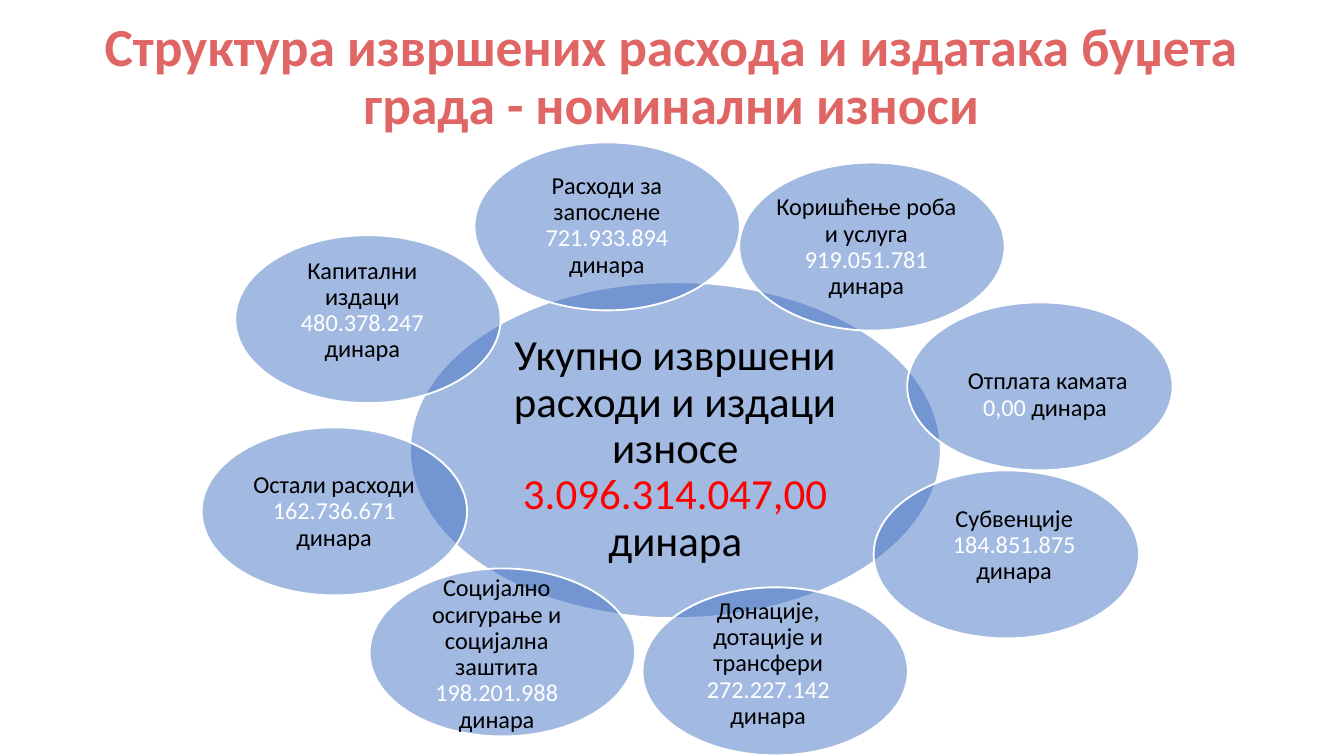
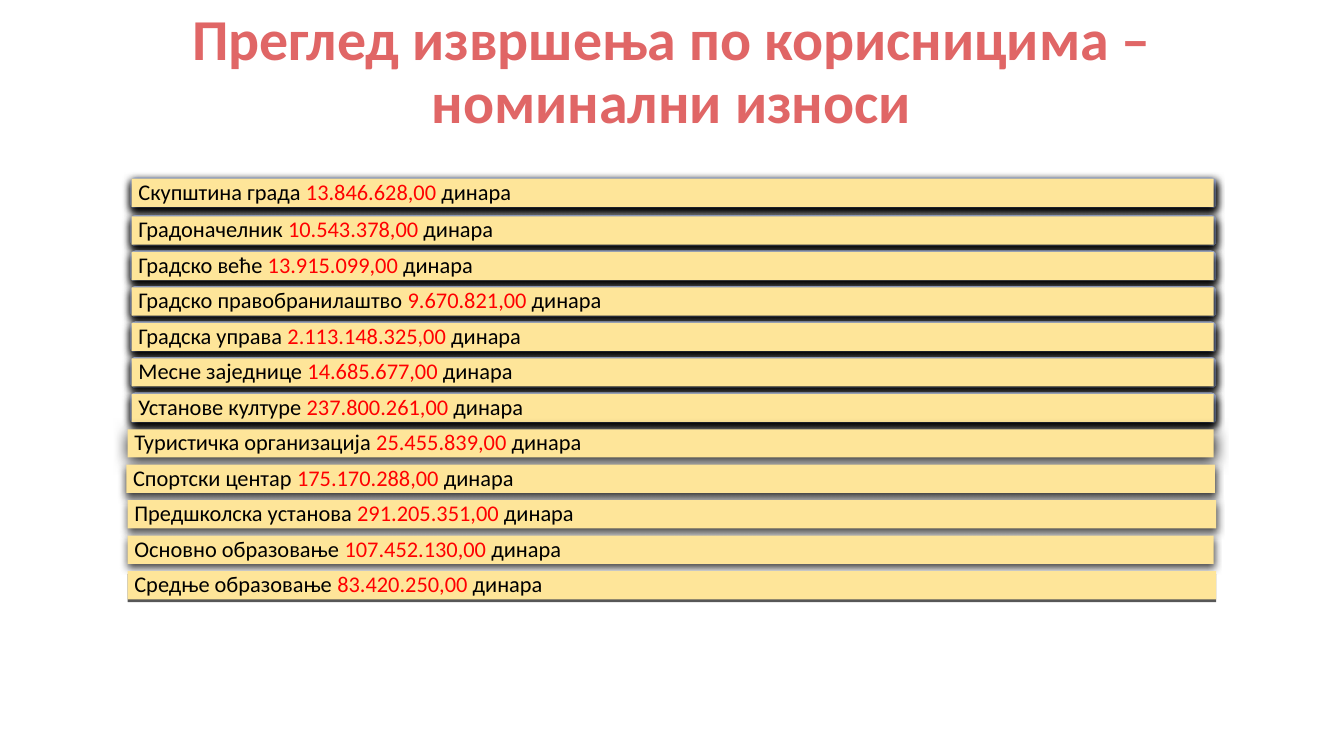
from lxml import etree
from pptx import Presentation
from pptx.dml.color import RGBColor
from pptx.enum.shapes import MSO_SHAPE
from pptx.enum.text import MSO_ANCHOR, PP_ALIGN
from pptx.oxml.ns import qn
from pptx.util import Inches, Pt

OVAL, RECT, ROUND = MSO_SHAPE.OVAL, MSO_SHAPE.RECTANGLE, MSO_SHAPE.ROUNDED_RECTANGLE
LEFT, CENTER = PP_ALIGN.LEFT, PP_ALIGN.CENTER
MIDDLE, BOTTOM = MSO_ANCHOR.MIDDLE, MSO_ANCHOR.BOTTOM

W = 10
H = W * 9 / 16
FONT = "Calibri"
BLACK, WHITE, RED = "000000", "FFFFFF", "FF0000"
TITLE_COLOR, BUBBLE, BAR = "E06666", "4372C3", "FEE599"
FRAME_TOP, FRAME_BOTTOM = "A6B6DE", "97AAD8"

# Content: a line break starts a new paragraph
EXPENSES_TITLE = "Структура извршених расхода и издатака буџета града - номинални износи"
TOTAL = ("Укупно извршени расходи и издаци износе ", "3.096.314.047,00", "\nдинара")
# label, amount, unit, bubble left and top, text left and top within the bubble
EXPENSES = [
    ("Расходи за запослене ", "721.933.894", " динара", (3.53, 1.06), (0.29, 0.18)),
    ("Коришћење роба и услуга ", "919.051.781", "\nдинара", (5.5, 1.21), (0.25, 0.19)),
    ("Отплата камата ", "0,00", " динара ", (6.75, 2.25), (0.35, 0.25)),
    ("Субвенције ", "184.851.875 ", "динара", (6.5, 3.5), (0.35, 0.12)),
    ("Донације, дотације и трансфери ", "272.227.142", " динара", (4.78, 4.37), (0.24, 0.13)),
    ("Социјално осигурање и социјална заштита ", "198.201.988", " динара",
     (2.75, 4.23), (0.25, 0.2)),
    ("Остали расходи ", "162.736.671 ", "динара", (1.5, 3.18), (0.29, 0.19)),
    ("Капитални издаци ", "480.378.247", " динара", (1.75, 1.75), (0.25, 0.12)),
]

USERS_TITLE = "Преглед извршења по корисницима – номинални износи"
FRAMED_USERS = [
    ("Скупштина града ", "13.846.628,00"),
    ("Градоначелник ", "10.543.378,00"),
    ("Градско веће ", "13.915.099,00"),
    ("Градско правобранилаштво ", "9.670.821,00"),
    ("Градска управа ", "2.113.148.325,00"),
    ("Месне заједнице ", "14.685.677,00"),
    ("Установе културе ", "237.800.261,00"),
]
# label, amount, bar left and width, shadow opacity and blur
PLAIN_USERS = [
    ("Туристичка организација ", "25.455.839,00", (0.95, 8.08), (89, 7.9)),
    ("Спортски центар ", "175.170.288,00", (0.94, 8.1), (78, 4.5)),
    ("Предшколска установа ", "291.205.351,00", (0.95, 8.1), (73, 4.5)),
    ("Основно образовање ", "107.452.130,00", (0.95, 8.08), (73, 4.5)),
    ("Средње образовање ", "83.420.250,00", (0.95, 8.1), (66, 0)),
]

# Layout: the first bar stands slightly apart from the even rows below it
BIG_W, BIG_H = 3.95, 2.5
SMALL_W, SMALL_H = BIG_W / 2, BIG_H / 2
FIRST_TOP, SECOND_TOP, LAST_TOP, ROW_H = 1.33, 1.61, 4.25, 0.21
FRAMED_SPAN, FRAMED_SHADOW = (0.98, 8.05), (89, 4.5)


def rgb(color):
    return RGBColor.from_string(color)


def write(sp, runs, size, align=LEFT, anchor=MIDDLE, bold=False, inset=(0.05, 0.05)):
    """Fill a shape with (text, colour) runs."""
    tf = sp.text_frame
    tf.word_wrap = True
    tf.vertical_anchor = anchor
    tf.margin_left = tf.margin_right = Inches(inset[0])
    tf.margin_top = tf.margin_bottom = Inches(inset[1])
    p = tf.paragraphs[0]
    for text, color in runs:
        if text.startswith("\n"):
            p = tf.add_paragraph()
        p.alignment, p.line_spacing = align, 0.9
        r = p.add_run()
        r.text = text.strip("\n")
        r.font.name, r.font.size, r.font.bold = FONT, Pt(size), bold
        r.font.color.rgb = rgb(color)


def add_box(slide, x, y, w, h, runs, size, **fmt):
    sp = slide.shapes.add_textbox(Inches(x), Inches(y), Inches(w), Inches(h))
    write(sp, runs, size, **fmt)


def add_shape(slide, kind, x, y, w, h, color):
    sp = slide.shapes.add_shape(kind, Inches(x), Inches(y), Inches(w), Inches(h))
    sp.shadow.inherit = False
    sp.fill.solid()
    sp.fill.fore_color.rgb = rgb(color)
    sp.line.fill.background()
    return sp


def set_alpha(color_el, percent):
    etree.SubElement(color_el, qn("a:alpha"), val=str(percent * 1000))


def add_shadow(sp, opacity, blur):
    effects = sp._element.spPr.find(qn("a:effectLst"))
    shadow = etree.SubElement(effects, qn("a:outerShdw"), blurRad=str(Pt(blur)),
                              dist=str(Pt(1.5)), dir="5400000", rotWithShape="0")
    set_alpha(etree.SubElement(shadow, qn("a:srgbClr"), val=BLACK), opacity)


def add_slide(prs, title, size):
    slide = prs.slides.add_slide(prs.slide_layouts[6])
    add_box(slide, 0.3, 0.19, 9.39, 0.87, [(title, TITLE_COLOR)], size,
            align=CENTER, anchor=BOTTOM, bold=True, inset=(0.1, 0.05))
    return slide


def add_bubble(slide, x, y, w, h):
    sp = add_shape(slide, OVAL, x, y, w, h, BUBBLE)
    set_alpha(sp._element.spPr.find(qn("a:solidFill"))[0], 49)
    sp.line.color.rgb = rgb(WHITE)
    sp.line.width = Pt(1)


def add_frame(slide, x, y, w, h):
    sp = add_shape(slide, ROUND, x, y, w, h, FRAME_TOP)
    sp.adjustments[0] = 0.167
    sp.fill.gradient()
    sp.fill.gradient_angle = 270
    for stop, color, pos in zip(sp.fill.gradient_stops, (FRAME_TOP, FRAME_BOTTOM), (0, 1)):
        stop.color.rgb = rgb(color)
        stop.position = pos
    add_shadow(sp, *FRAMED_SHADOW)


def add_bar(slide, y, span, shadow, label, amount):
    sp = add_shape(slide, RECT, span[0], y, span[1], ROW_H, BAR)
    add_shadow(sp, *shadow)
    write(sp, [(label, BLACK), (amount, RED), (" динара", BLACK)], 12)


def build_expenses(prs):
    slide = add_slide(prs, EXPENSES_TITLE, 28.7)
    # Total in the middle
    add_bubble(slide, 3.05, 2.1, BIG_W, BIG_H)
    add_box(slide, 3.63, 2.46, 2.79, 1.77, zip(TOTAL, (BLACK, RED, BLACK)), 23,
            align=CENTER, inset=(0.03, 0.03))
    # Expense bubbles around it
    for label, amount, unit, (x, y), (dx, dy) in EXPENSES:
        add_bubble(slide, x, y, SMALL_W, SMALL_H)
        add_box(slide, x + dx, y + dy, 1.39, 0.88,
                [(label, BLACK), (amount, WHITE), (unit, BLACK)], 13,
                align=CENTER, inset=(0.02, 0.02))


def build_users(prs):
    slide = add_slide(prs, USERS_TITLE, 31)
    rows = [(*user, FRAMED_SPAN, FRAMED_SHADOW) for user in FRAMED_USERS] + PLAIN_USERS
    pitch = (LAST_TOP - SECOND_TOP) / (len(rows) - 2)
    for i, (label, amount, span, shadow) in enumerate(rows):
        y = SECOND_TOP + (i - 1) * pitch if i else FIRST_TOP
        if i < len(FRAMED_USERS):
            add_frame(slide, span[0] - 0.01, y - 0.01, span[1] + 0.03, ROW_H + 0.02)
        add_bar(slide, y, span, shadow, label, amount)


def main():
    prs = Presentation()
    prs.slide_width, prs.slide_height = Inches(W), Inches(H)
    build_expenses(prs)
    build_users(prs)
    prs.save("out.pptx")


if __name__ == "__main__":
    main()
